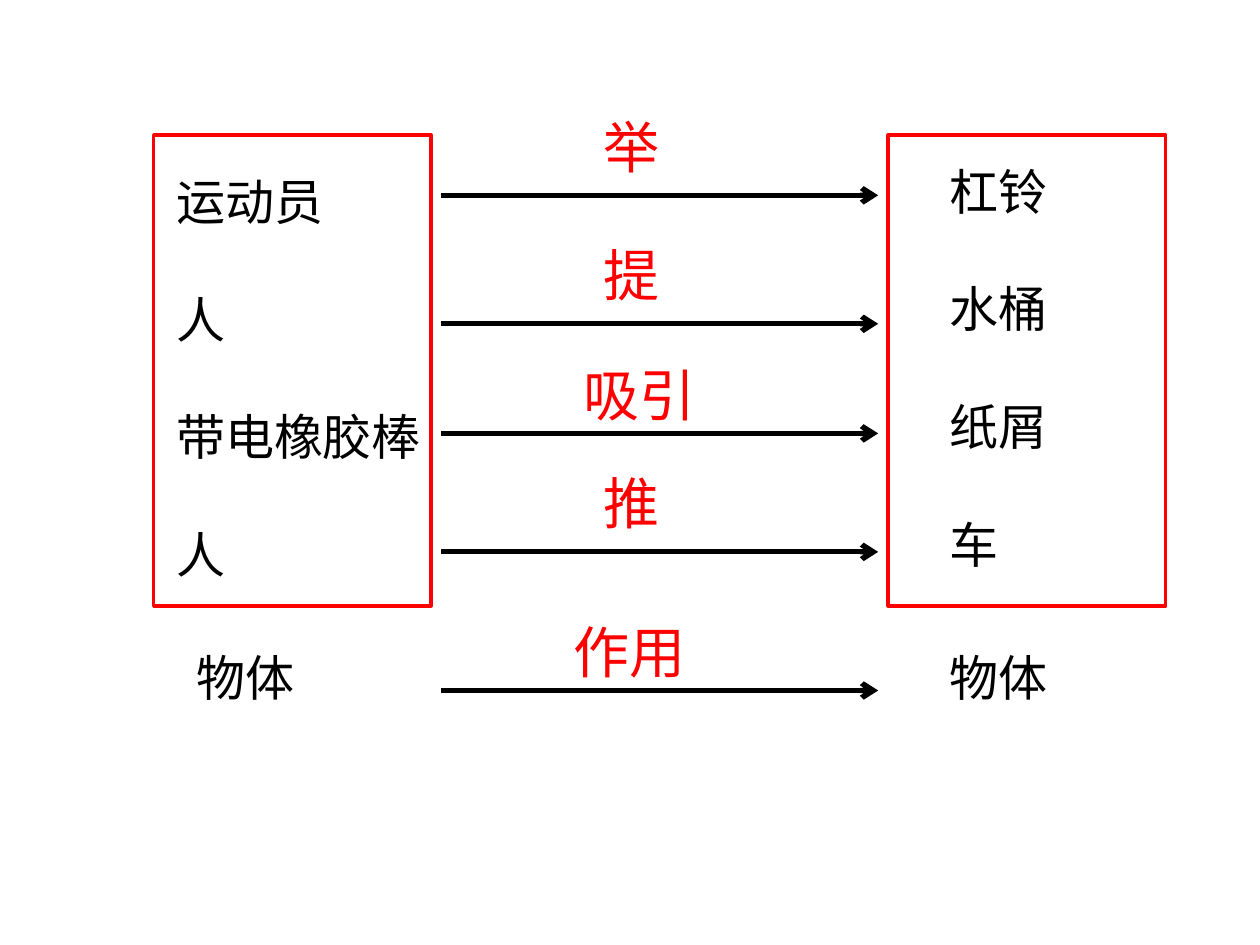
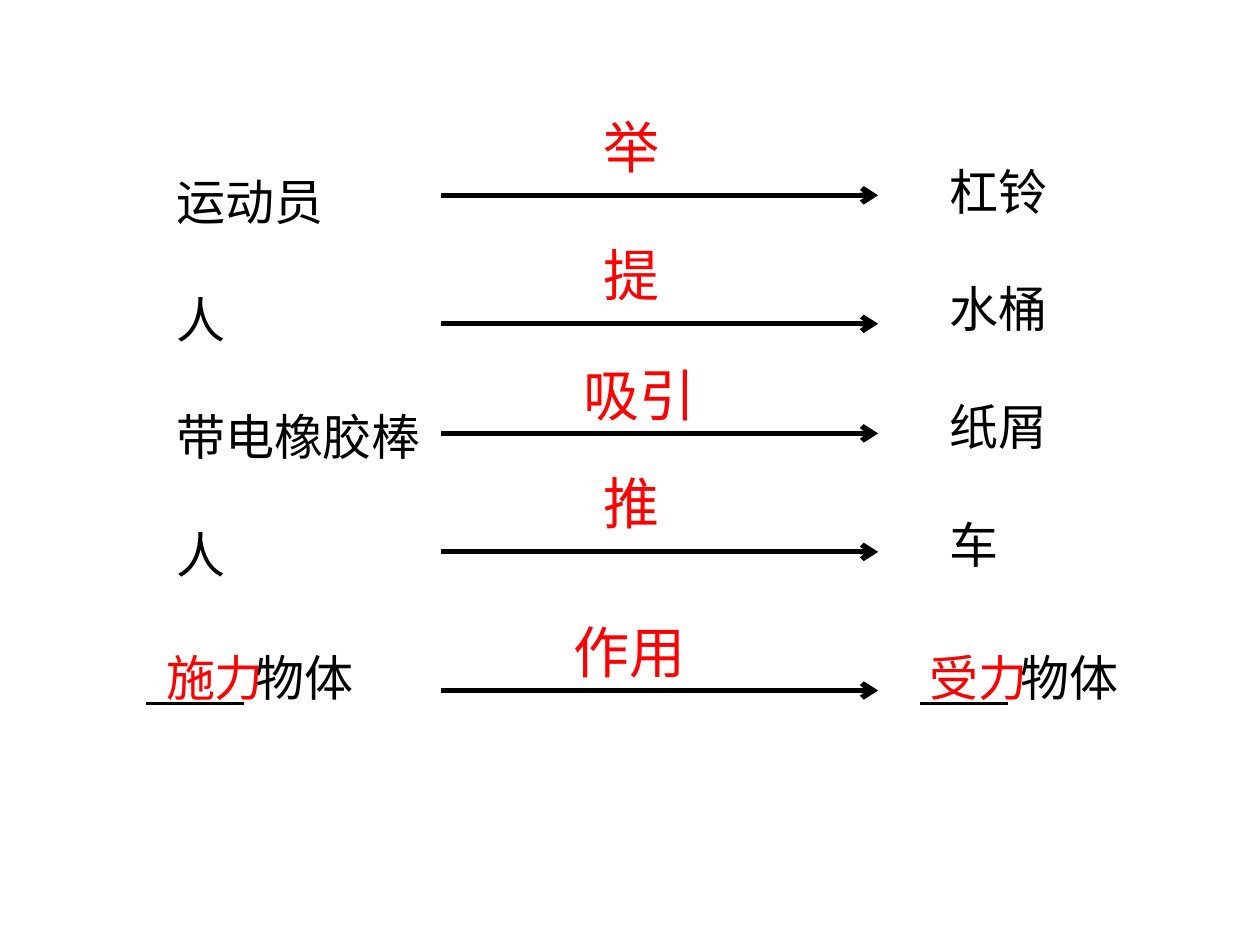
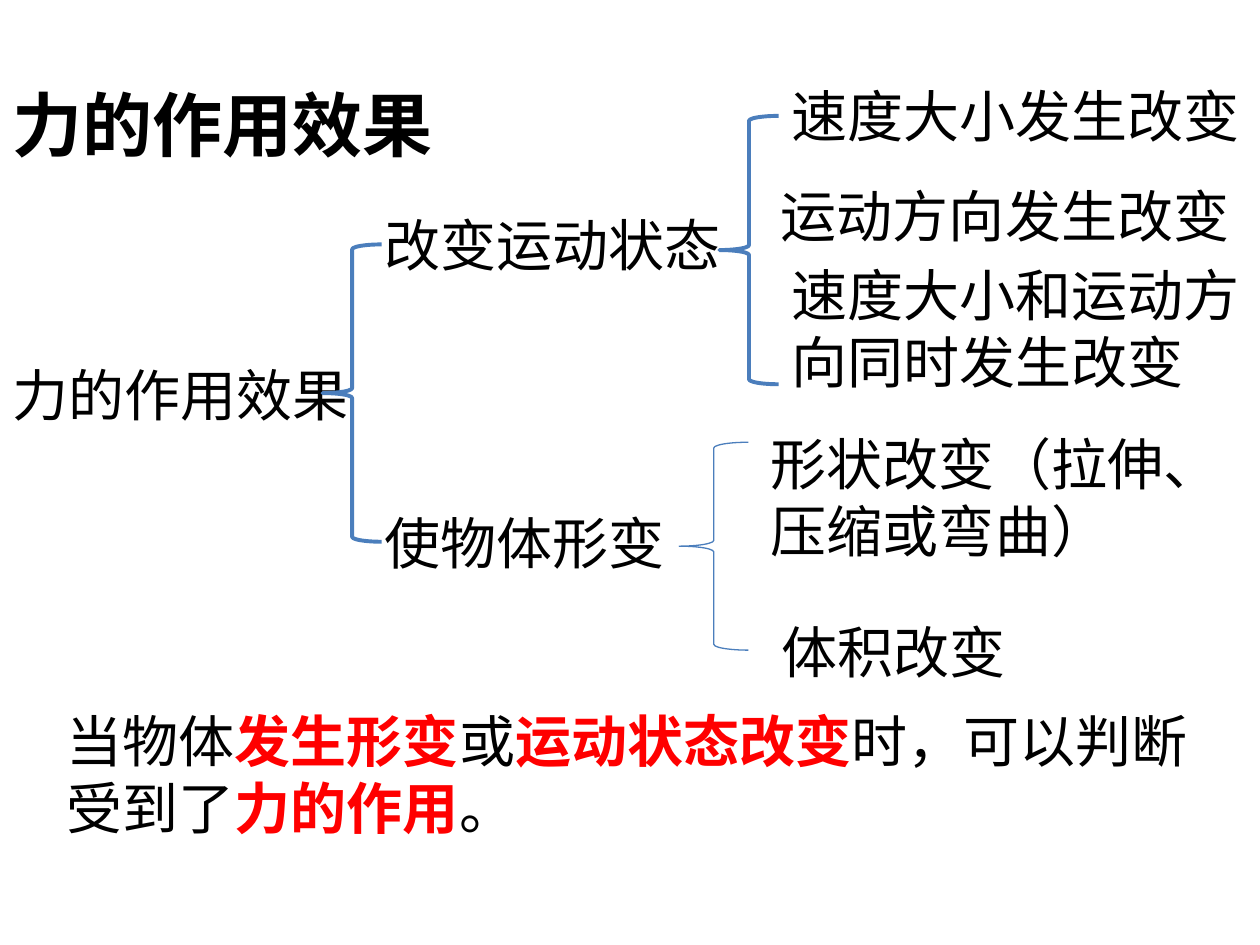
"""Build three slides on forces: who acts on what, and what a force does."""
from dataclasses import dataclass

from lxml.etree import SubElement
from pptx import Presentation
from pptx.dml.color import RGBColor
from pptx.enum.shapes import MSO_CONNECTOR, MSO_SHAPE
from pptx.enum.text import MSO_AUTO_SIZE
from pptx.oxml.ns import qn
from pptx.util import Inches, Pt


@dataclass(frozen=True)
class Theme:
    font: str = "Noto Sans CJK SC"
    black: str = "000000"
    red: str = "FF0000"
    blue: str = "4B7EBC"
    body: int = 28
    large: int = 32
    title: int = 40
    row_gap: float = 33.7


T = Theme()

ACTORS = ["运动员", "人", "带电橡胶棒", "人"]
TARGETS = ["杠铃", "水桶", "纸屑", "车"]
ACTIONS = [
    ("举", 4.69, 0.84, 0.71, 1.55),
    ("提", 4.69, 1.86, 0.71, 2.57),
    ("吸引", 4.53, 2.81, 1.1, 3.44),
    ("推", 4.69, 3.67, 0.71, 4.38),
    ("作用", 4.45, 4.85, 1.18, 5.48),
]
ARROW_X = (3.5, 6.97)
SUMMARY_Y = 5.09
OBJECTS = [(7.44, 1.18), (1.46, 1.02)]
FRAMES_X = [1.22, 7.05]
ROLES = [
    ("施力", 1.22, (1.06, 2.2), 0.87, (1.16, 1.94)),
    ("受力", 7.28, (7.2, 2.05), 0.8, (7.3, 8.0)),
]

EFFECTS = [
    ("力的作用效果", 0, 2.81, 2.99, 0.64),
    ("改变运动状态", 2.95, 1.62, 2.99, 0.64),
    ("使物体形变", 2.95, 3.99, 2.44, 0.64),
    ("速度大小发生改变", 6.18, 0.6, 3.82, 0.64),
    ("运动方向发生改变", 6.1, 1.39, 3.9, 0.64),
    ("速度大小和运动方向同时发生改变", 6.18, 2.02, 3.82, 1.18),
    ("形状改变（拉伸、压缩或弯曲）", 6.02, 3.36, 3.62, 1.18),
    ("体积改变", 6.1, 4.85, 2.05, 0.64),
]
BRACES = [
    (2.56, 1.94, 0.47, 2.36, 2.25),
    (5.71, 0.92, 0.47, 2.13, 2.25),
    (5.39, 3.51, 0.55, 1.65, 0.75),
]
CONCLUSION = [
    ("当物体", False), ("发生形变", True), ("或", False),
    ("运动状态改变", True), ("时，可以判断受到了", False),
    ("力的作用", True), ("。", False),
]


def add_text(s, paragraphs, x, y, w, h, *, size=T.body, color=T.black,
             bold=False, wrap=True, gap=0, indent=0):
    """Add a text box; a paragraph is a string or a list of (text, emphasised)."""
    if isinstance(paragraphs, str):
        paragraphs = [paragraphs]
    tf = s.shapes.add_textbox(Inches(x), Inches(y), Inches(w), Inches(h)).text_frame
    tf.word_wrap = wrap
    tf.auto_size = MSO_AUTO_SIZE.SHAPE_TO_FIT_TEXT
    for i, runs in enumerate(paragraphs):
        p = tf.add_paragraph() if i else tf.paragraphs[0]
        p.space_before = Pt(gap if i else 0)
        if indent:
            p._p.get_or_add_pPr().set("marL", str(Inches(indent)))
        for text, strong in [(runs, False)] if isinstance(runs, str) else runs:
            r = p.add_run()
            r.text = text
            r.font.size = Pt(size)
            r.font.bold = bold or strong
            r.font.color.rgb = RGBColor.from_string(T.red if strong else color)
            r.font.name = T.font
            SubElement(r._r.get_or_add_rPr(), qn("a:ea"), typeface=T.font)


def add_line(s, xs, y, width, arrow=False):
    """Add a horizontal black line, with an arrowhead on request."""
    line = s.shapes.add_connector(MSO_CONNECTOR.STRAIGHT, Inches(xs[0]), Inches(y),
                                  Inches(xs[1]), Inches(y))
    line.line.width = Pt(width)
    line.line.color.rgb = RGBColor.from_string(T.black)
    if arrow:
        SubElement(line.line._get_or_add_ln(), qn("a:tailEnd"), type="arrow")
    SubElement(line._element.spPr, qn("a:effectLst"))


def add_outline(s, kind, x, y, w, h, color, width):
    """Add an unfilled preset shape."""
    sp = s.shapes.add_shape(kind, Inches(x), Inches(y), Inches(w), Inches(h))
    sp.shadow.inherit = False
    sp.fill.background()
    sp.line.color.rgb = RGBColor.from_string(color)
    sp.line.width = Pt(width)


def add_blank(prs):
    """Add a slide on the blank layout."""
    return prs.slides.add_slide(prs.slide_layouts[6])


def add_interactions(prs):
    """Add a slide with actors, actions and targets."""
    s = add_blank(prs)
    add_text(s, ACTORS, 1.3, 1.31, 2.28, 3.4, gap=T.row_gap)
    add_text(s, TARGETS, 7.44, 1.23, 1.1, 3.4, gap=T.row_gap)
    for verb, x, y, w, arrow_y in ACTIONS:
        add_line(s, ARROW_X, arrow_y, 3, arrow=True)
        add_text(s, verb, x, y, w, 0.64, size=T.large, color=T.red)
    return s


def build_objects(prs):
    """Frame the two groups of objects."""
    s = add_interactions(prs)
    for x, w in OBJECTS:
        add_text(s, "物体", x, SUMMARY_Y, w, 0.57)
    for x in FRAMES_X:
        add_outline(s, MSO_SHAPE.RECTANGLE, x, 1.07, 2.2, 3.74, T.red, 2)


def build_roles(prs):
    """Name the object that exerts the force and the one that receives it."""
    s = add_interactions(prs)
    for role, role_x, (x, w), indent, rule in ROLES:
        add_text(s, "物体", x, SUMMARY_Y, w, 0.57, indent=indent)
        add_line(s, rule, 5.58, 1.75)
        add_text(s, role, role_x, SUMMARY_Y, 1.1, 0.57, color=T.red)


def build_effects(prs):
    """Lay out the tree of effects and its conclusion."""
    s = add_blank(prs)
    add_text(s, "力的作用效果", 0, 0.6, 3.58, 0.77, size=T.title, bold=True, wrap=False)
    for text, *box in EFFECTS:
        add_text(s, text, *box, size=T.large)
    for *box, width in BRACES:
        add_outline(s, MSO_SHAPE.LEFT_BRACE, *box, T.blue, width)
    add_text(s, [CONCLUSION], 0.43, 5.56, 9.21, 1.18, size=T.large)


def main():
    """Build and save the slides."""
    prs = Presentation()
    prs.slide_width, prs.slide_height = Inches(10), Inches(7.5)
    build_objects(prs)
    build_roles(prs)
    build_effects(prs)
    prs.save("out.pptx")


if __name__ == "__main__":
    main()
